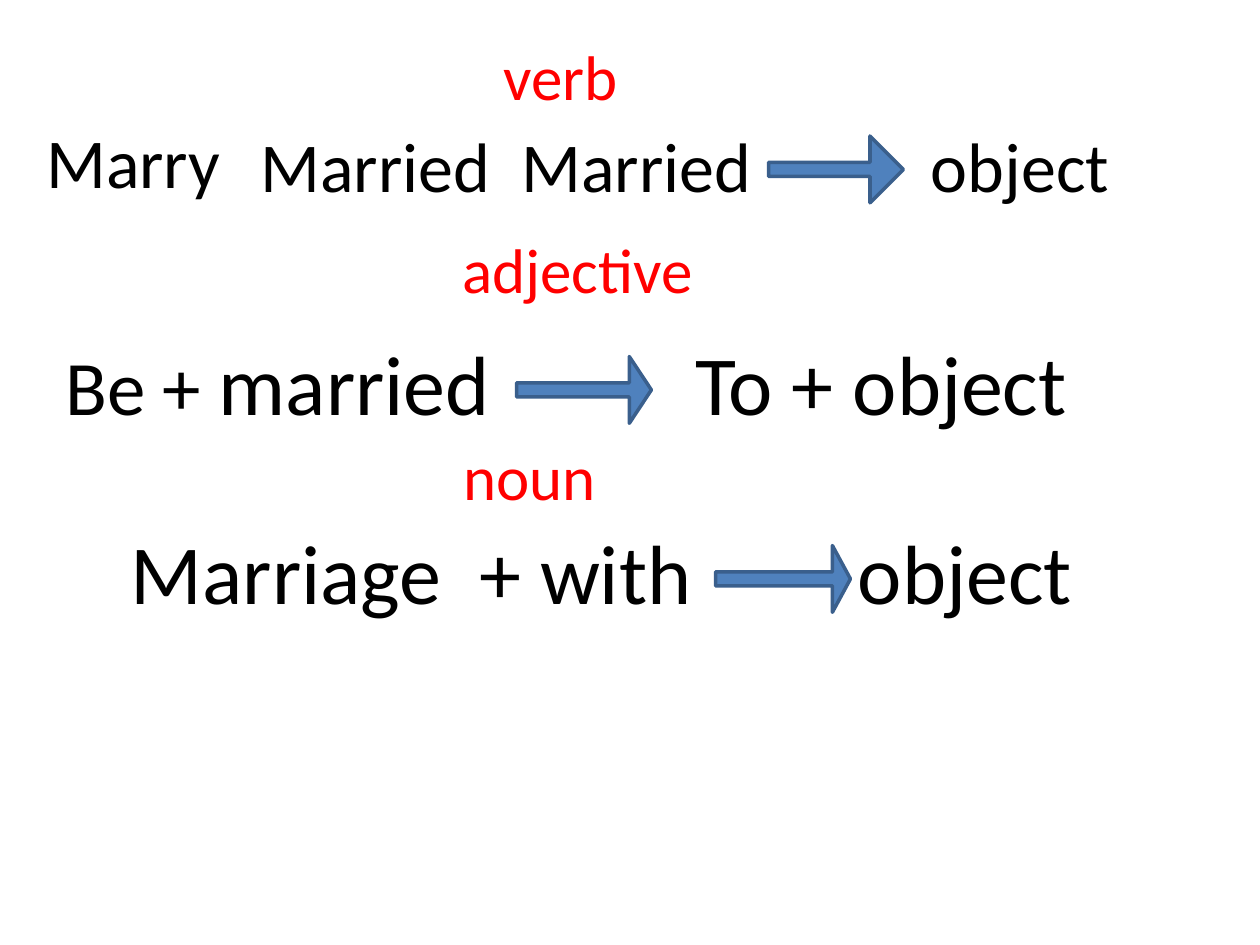
import pptx
import pptx.dml.color
import pptx.enum.shapes
import pptx.enum.text
import pptx.oxml
import pptx.oxml.ns
import pptx.util
from dataclasses import dataclass

Inches = pptx.util.Inches
Pt = pptx.util.Pt
RGB = pptx.dml.color.RGBColor.from_string


@dataclass(frozen=True)
class Theme:
    font: str = "Calibri"
    ink: str = "000000"
    label: str = "FF0000"
    fill: str = "4F81BD"
    line: str = "3A5F8C"
    small: int = 36
    mid: int = 40
    lead: int = 44
    large: int = 48


THEME = Theme()
# Box height for one line of text at each size
HEIGHT = {THEME.small: 0.71, THEME.mid: 0.77, THEME.large: 0.91}


def add_text(slide, left, top, width, runs, color=THEME.ink, tab=None):
    """Place one line of (text, size) runs; tab is a stop in inches."""
    tall = HEIGHT[max(size for _, size in runs)]
    box = slide.shapes.add_textbox(
        Inches(left), Inches(top), Inches(width), Inches(tall))
    frame = box.text_frame
    frame.word_wrap = tab is not None
    frame.auto_size = pptx.enum.text.MSO_AUTO_SIZE.SHAPE_TO_FIT_TEXT
    para = frame.paragraphs[0]
    if tab is not None:
        stops = pptx.oxml.parse_xml(
            f'<a:tabLst {pptx.oxml.ns.nsdecls("a")}>'
            f'<a:tab pos="{Inches(tab)}" algn="l"/></a:tabLst>')
        para._p.get_or_add_pPr().append(stops)
    for text, size in runs:
        run = para.add_run()
        run.text = text
        for name, value in {"name": THEME.font, "size": Pt(size)}.items():
            setattr(run.font, name, value)
        run.font.color.rgb = RGB(color)


def add_label(slide, left, top, width, text):
    add_text(slide, left, top, width, [(text, THEME.small)], THEME.label)


def add_arrow(slide, left, top, head):
    """Draw a right arrow; head is its head length over its height."""
    arrow = slide.shapes.add_shape(
        pptx.enum.shapes.MSO_SHAPE.RIGHT_ARROW,
        Inches(left), Inches(top), Inches(1.07), Inches(0.53))
    arrow.shadow.inherit = False
    arrow.adjustments[0] = 0.21
    arrow.adjustments[1] = head
    arrow.fill.solid()
    arrow.fill.fore_color.rgb = RGB(THEME.fill)
    arrow.line.color.rgb = RGB(THEME.line)
    arrow.line.width = Pt(2)


def add_verb(slide, left, top):
    add_label(slide, left + 3.63, top, 1.12, "verb")
    words = [(0, 0.64, 1.73, "Marry"),
             (1.7, 0.67, 4.14, "Married  Married"),
             (7.02, 0.67, 1.63, "object")]
    for dx, dy, width, text in words:
        add_text(slide, left + dx, top + dy, width, [(text, THEME.mid)])
    add_arrow(slide, left + 5.83, top + 0.83, 0.5)


def add_adjective(slide, left, top):
    add_label(slide, left + 3.15, top, 2.05, "adjective")
    add_text(slide, left, top + 0.8, 3.74,
             [("Be + ", THEME.lead), ("married", THEME.large),
              (" ", THEME.lead)])
    add_arrow(slide, left + 3.68, top + 1.05, 0.33)
    add_text(slide, left + 5, top + 0.8, 3.18, [("To + object", THEME.large)])


def add_noun(slide, left, top):
    add_label(slide, left + 2.64, top, 1.26, "noun")
    add_text(slide, left, top + 0.66, 7.79,
             [("Marriage  + with\tobject", THEME.large)], tab=5.77)
    add_arrow(slide, left + 4.74, top + 0.91, 0.27)


def main():
    deck = pptx.Presentation()
    deck.slide_width, deck.slide_height = Inches(10), Inches(7.5)
    slide = deck.slides.add_slide(deck.slide_layouts[6])
    add_verb(slide, 0.27, 0.25)
    add_adjective(slide, 0.42, 1.78)
    add_noun(slide, 0.94, 3.42)
    deck.save("out.pptx")


if __name__ == "__main__":
    main()
